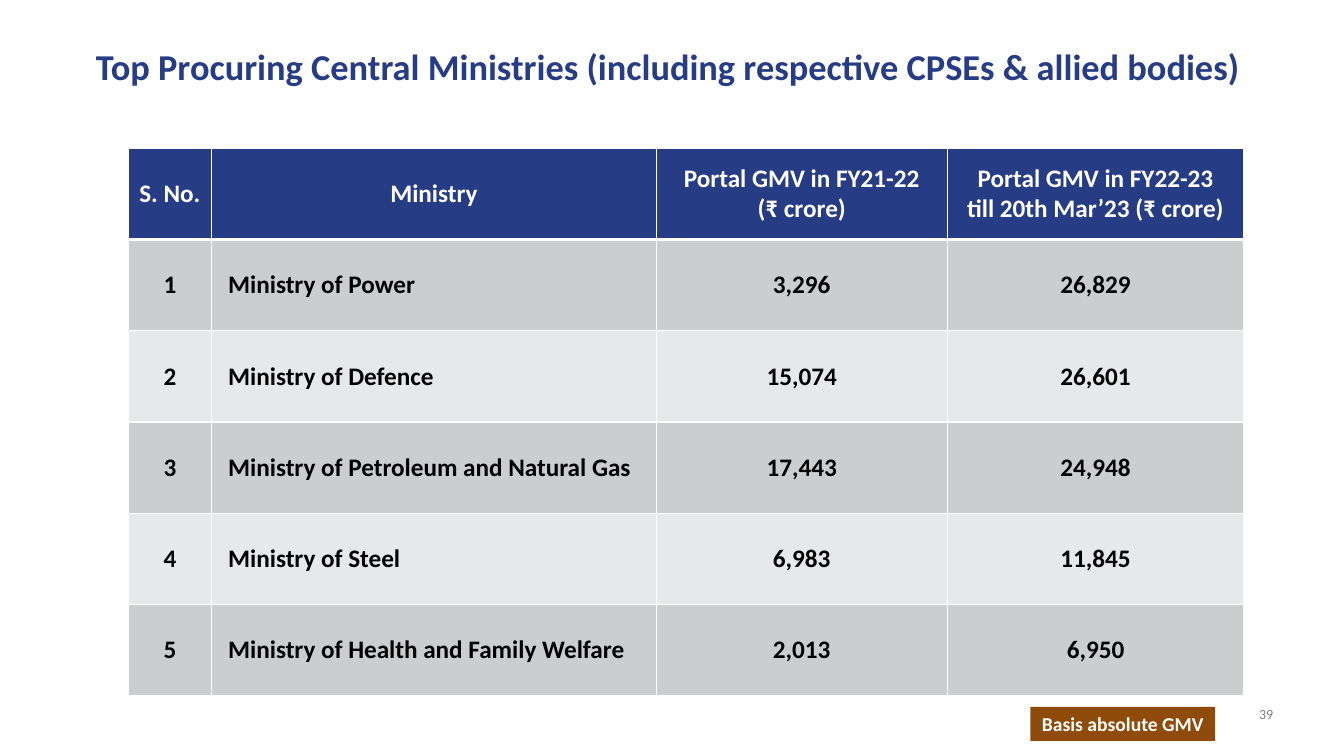
import pptx
import pptx.util
import pptx.dml.color
import pptx.enum.shapes
import pptx.enum.text
import pptx.oxml
import pptx.oxml.ns

Pt = pptx.util.Pt
ALIGN = pptx.enum.text.PP_ALIGN
ANCHOR = pptx.enum.text.MSO_ANCHOR

TITLE = "Top Procuring Central Ministries (including respective CPSEs & allied bodies)"
BASIS = "Basis absolute GMV"
PAGE = "39"
HEADINGS = [
    "S. No.",
    "Ministry",
    "Portal GMV in FY21-22\n(₹ crore)",
    "Portal GMV in FY22-23\ntill 20th Mar’23 (₹ crore)",
]
MINISTRIES = [
    ("Ministry of Power", "3,296", "26,829"),
    ("Ministry of Defence", "15,074", "26,601"),
    ("Ministry of Petroleum and Natural Gas", "17,443", "24,948"),
    ("Ministry of Steel", "6,983", "11,845"),
    ("Ministry of Health and Family Welfare", "2,013", "6,950"),
]

NAVY, BROWN, GREY = "263C85", "8E4B09", "808080"
WHITE, BLACK = "FFFFFF", "000000"
BANDS = ["CCCDCF", "E7E8E9"]

TABLE_LEFT, TABLE_TOP = 91.5, 106
COLUMN_WIDTHS = [59.75, 317.5, 208, 211.75]
ROW_HEIGHT = 65.15
CELL_MARGIN, NAME_MARGIN = 3.6, 11.75
RULE, HEADING_RULE = 1, 3

TITLE_FORMAT = {"size": Pt(26), "bold": True}
CELL_FORMAT = {"size": Pt(18), "bold": True}
BASIS_FORMAT = {"size": Pt(14), "bold": True}
PAGE_FORMAT = {"size": Pt(10), "bold": False}


def rgb(hex_color):
    return pptx.dml.color.RGBColor.from_string(hex_color)


def paint(part, hex_color):
    part.fill.solid()
    part.fill.fore_color.rgb = rgb(hex_color)


def write(frame, text, font_format, hex_color, align):
    frame.text = text
    for paragraph in frame.paragraphs:
        paragraph.alignment = align
        paragraph.font.name = "Calibri"
        paragraph.font.color.rgb = rgb(hex_color)
        for key, value in font_format.items():
            setattr(paragraph.font, key, value)


def set_margins(holder, margin):
    for side in ("left", "top", "right", "bottom"):
        setattr(holder, f"margin_{side}", Pt(margin))


def add_label(slide, box, text, font_format, hex_color, align, anchor):
    frame = slide.shapes.add_textbox(*map(Pt, box)).text_frame
    set_margins(frame, 0)
    frame.word_wrap = True
    frame.vertical_anchor = anchor
    write(frame, text, font_format, hex_color, align)
    return frame


def add_borders(cell, widths):
    """Draw white cell edges; widths maps L, R, T, B to points."""
    properties = cell._tc.get_or_add_tcPr()
    for index, (side, width) in enumerate(widths.items()):
        properties.insert(index, pptx.oxml.parse_xml(
            f'<a:ln{side} {pptx.oxml.ns.nsdecls("a")} w="{Pt(width)}">'
            f'<a:solidFill><a:srgbClr val="{WHITE}"/></a:solidFill></a:ln{side}>'))


def add_ministry_table(slide):
    rows = [HEADINGS] + [
        (str(rank), *ministry) for rank, ministry in enumerate(MINISTRIES, 1)]
    table = slide.shapes.add_table(
        len(rows), len(HEADINGS), Pt(TABLE_LEFT), Pt(TABLE_TOP),
        Pt(sum(COLUMN_WIDTHS)), Pt(ROW_HEIGHT * len(rows))).table
    for column, width in zip(table.columns, COLUMN_WIDTHS):
        column.width = Pt(width)
    for r, row in enumerate(rows):
        table.rows[r].height = Pt(ROW_HEIGHT)
        for c, text in enumerate(row):
            cell = table.cell(r, c)
            is_heading = r == 0
            is_name = c == 1 and not is_heading
            paint(cell, NAVY if is_heading else BANDS[(r - 1) % 2])
            set_margins(cell, CELL_MARGIN)
            if is_name:
                cell.margin_left = Pt(NAME_MARGIN)
            cell.vertical_anchor = ANCHOR.MIDDLE
            write(cell.text_frame, text, CELL_FORMAT,
                  WHITE if is_heading else BLACK,
                  ALIGN.LEFT if is_name else ALIGN.CENTER)
            add_borders(cell, {
                "L": RULE, "R": RULE,
                "T": HEADING_RULE if r == 1 else RULE,
                "B": HEADING_RULE if is_heading else RULE})


def add_basis_tag(slide):
    tag = slide.shapes.add_shape(
        pptx.enum.shapes.MSO_SHAPE.RECTANGLE, *map(Pt, (736, 505, 132, 24.25)))
    tag.shadow.inherit = False
    paint(tag, BROWN)
    tag.line.fill.background()
    tag.text_frame.word_wrap = False
    tag.text_frame.vertical_anchor = ANCHOR.MIDDLE
    write(tag.text_frame, BASIS, BASIS_FORMAT, WHITE, ALIGN.CENTER)


def main():
    deck = pptx.Presentation()
    deck.slide_width, deck.slide_height = Pt(960), Pt(540)
    slide = deck.slides.add_slide(deck.slide_layouts[6])
    add_label(slide, (879, 504, 30.5, 12.25), PAGE, PAGE_FORMAT, GREY,
              ALIGN.RIGHT, ANCHOR.BOTTOM)
    title = add_label(slide, (68.5, 35.25, 841, 30.25), TITLE, TITLE_FORMAT, NAVY,
                      ALIGN.LEFT, ANCHOR.TOP)
    title.paragraphs[0].line_spacing = 0.9
    add_ministry_table(slide)
    add_basis_tag(slide)
    deck.save("out.pptx")


if __name__ == "__main__":
    main()
